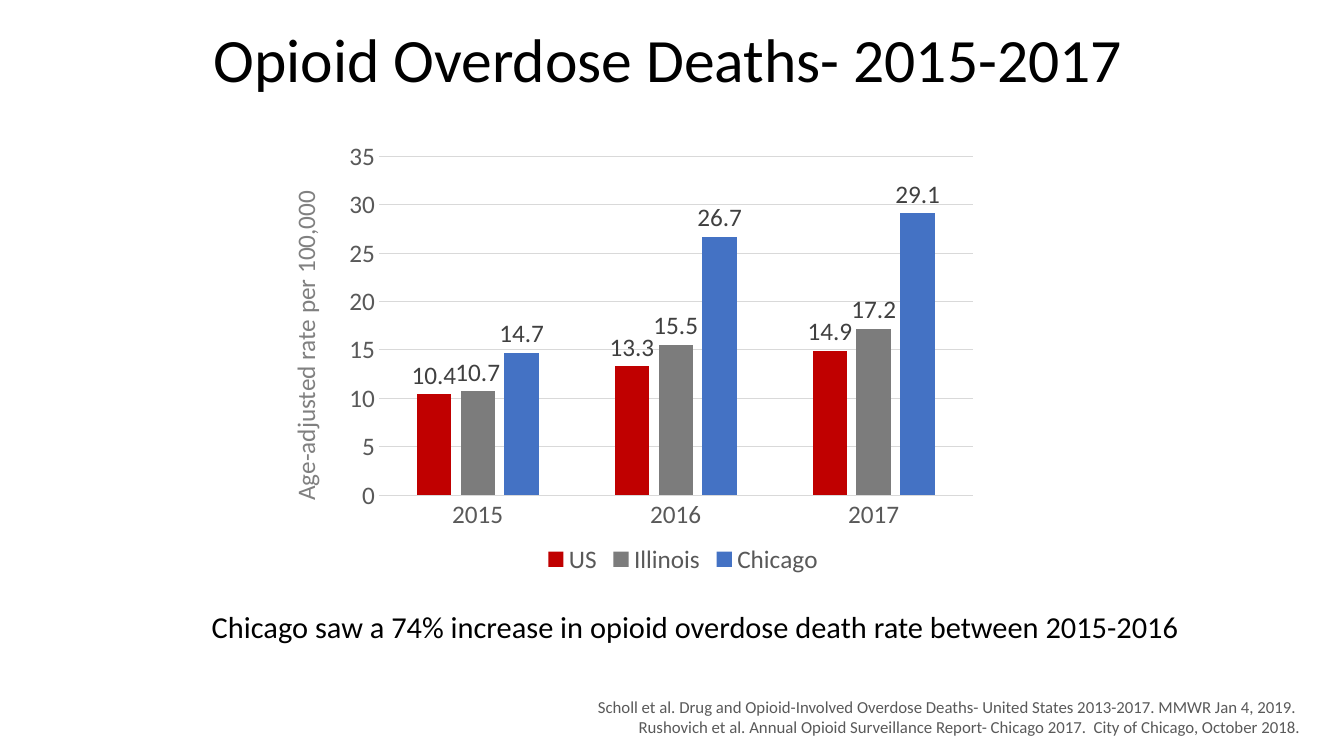
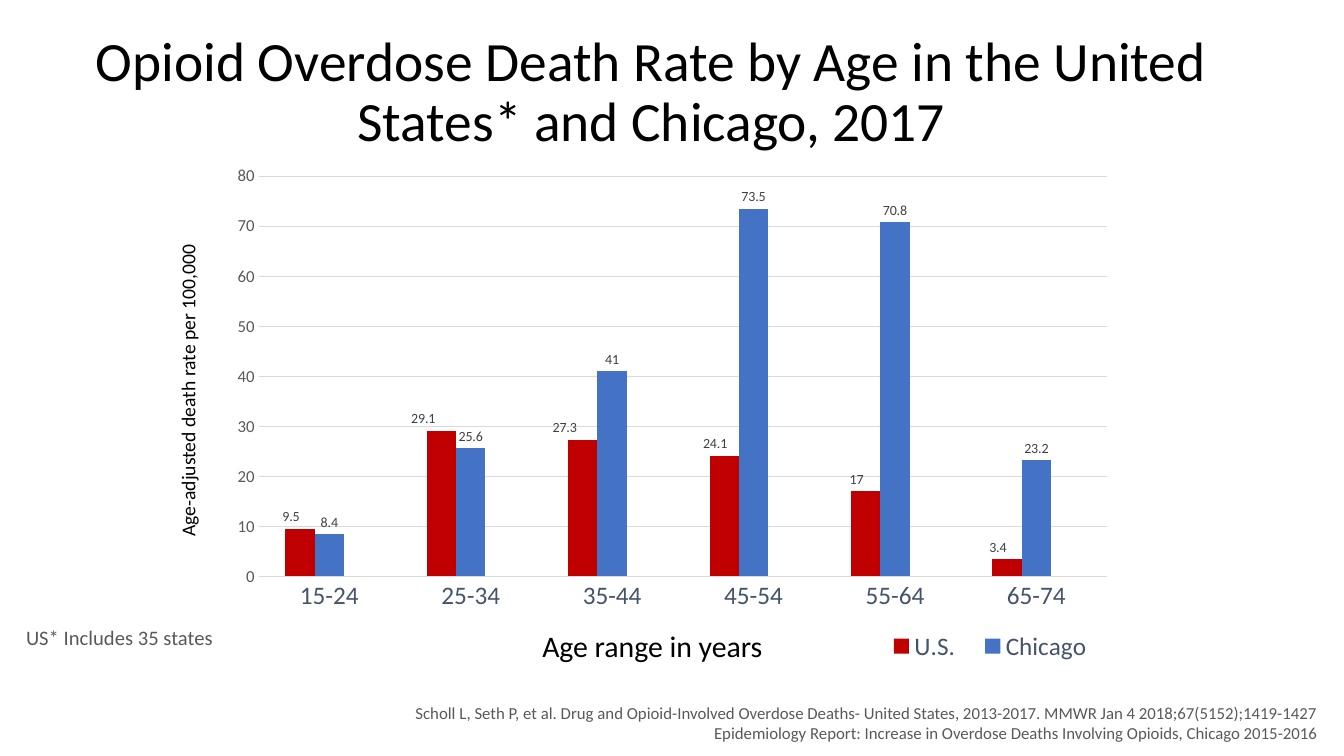
from lxml import etree
from pptx import Presentation
from pptx import util as u
from pptx.chart.data import CategoryChartData
from pptx.dml.color import RGBColor
from pptx.enum import chart as charts, text
from pptx.oxml import ns

Inches, Pt = u.Inches, u.Pt

# Shared look
FONT = "Calibri"
BLACK = RGBColor(0x00, 0x00, 0x00)
DARK = RGBColor(0x40, 0x40, 0x40)
GREY = RGBColor(0x59, 0x59, 0x59)
MID_GREY = RGBColor(0x80, 0x80, 0x80)
SLATE = RGBColor(0x44, 0x54, 0x6A)
RULE = RGBColor(0xD9, 0xD9, 0xD9)
RED = RGBColor(0xC0, 0x00, 0x00)
BAR_GREY = RGBColor(0x7C, 0x7C, 0x7C)
BLUE = RGBColor(0x44, 0x72, 0xC4)

LEFT, CENTER, RIGHT = (text.PP_ALIGN.LEFT, text.PP_ALIGN.CENTER, text.PP_ALIGN.RIGHT)
MIDDLE = text.MSO_ANCHOR.MIDDLE
TITLE = {"align": CENTER, "anchor": MIDDLE, "line_spacing": 0.9}
CAPTION = {"align": CENTER, "line_spacing": 0.7, "space_before": Pt(10)}
FOOTER = {"size": 12, "color": GREY, "align": RIGHT}
LABEL = {"wrap": False}
SIDE_LABEL = {"wrap": False, "rotation": 270}


def add_words(page, place, lines, size, color=BLACK, align=LEFT, wrap=True,
              rotation=0, anchor=text.MSO_ANCHOR.TOP, **spacing):
    box = page.shapes.add_textbox(*map(Inches, place))
    box.rotation = rotation
    frame = box.text_frame
    frame.word_wrap = wrap
    frame.vertical_anchor = anchor
    frame.text = "\n".join(lines)
    for para in frame.paragraphs:
        for name, value in {"alignment": align, **spacing}.items():
            setattr(para, name, value)
        for name, value in {"name": FONT, "size": Pt(size)}.items():
            setattr(para.font, name, value)
        para.font.color.rgb = color


def set_layout(parent, index, **values):
    """Give a chart part a manual position, in fractions of the chart."""
    for old in parent.findall(ns.qn("c:layout")):
        parent.remove(old)
    layout = etree.Element(ns.qn("c:layout"))
    manual = etree.SubElement(layout, ns.qn("c:manualLayout"))
    for name, value in values.items():
        etree.SubElement(manual, ns.qn("c:" + name)).set("val", str(value))
    parent.insert(index, layout)


SLIDES = [
    {
        "chart": (3.33, 0.88, 6.89, 4.87),
        "categories": ["2015", "2016", "2017"],
        "series": [
            ("US", RED, [10.4, 13.3, 14.9]),
            ("Illinois", BAR_GREY, [10.7, 15.5, 17.2]),
            ("Chicago", BLUE, [14.7, 26.7, 29.1]),
        ],
        "gap": 219, "overlap": -27, "top": 35, "step": 5,
        "plot": {"x": 0.062, "y": 0.138, "w": 0.855, "h": 0.69},
        "sizes": {"category": 18, "value": 18, "label": 18},
        "accent": GREY,
        "words": [
            ((1.45, 0.2, 10.36, 0.84), ["Opioid Overdose Deaths- 2015-2017"],
             {"size": 44, **TITLE}),
            ((1.79, 6.08, 10.21, 0.67),
             ["Chicago saw a 74% increase in opioid overdose death rate between 2015-2016"],
             {"size": 21.7, **CAPTION}),
            ((1.37, 3.21, 3.31, 0.4), ["Age-adjusted rate per 100,000"],
             {"size": 18, "color": MID_GREY, **SIDE_LABEL}),
            ((0.14, 6.86, 12.86, 0.5),
             ["Scholl et al. Drug and Opioid-Involved Overdose Deaths- United States "
              "2013-2017. MMWR Jan 4, 2019. ",
              "Rushovich et al. Annual Opioid Surveillance Report- Chicago 2017.  "
              "City of Chicago, October 2018."], FOOTER),
        ],
    },
    {
        "chart": (2.17, 1.55, 9, 5.09),
        "categories": ["15-24", "25-34", "35-44", "45-54", "55-64", "65-74"],
        "series": [
            ("U.S.", RED, [9.5, 29.1, 27.3, 24.1, 17, 3.4]),
            ("Chicago", BLUE, [8.4, 25.6, 41, 73.5, 70.8, 23.2]),
            ("Series 3", BAR_GREY, [None] * 6),  # empty slot beside each pair
        ],
        "gap": 182, "overlap": 0, "top": 80, "step": 10,
        "plot": {"x": 0.044, "y": 0.039, "w": 0.935, "h": 0.78},
        "legend": {"x": 0.72, "y": 0.91, "w": 0.26, "h": 0.09},
        "hidden_entry": 2,
        "label_shifts": [-0.01, -0.02, -0.02, -0.01, -0.01, -0.01],
        "sizes": {"category": 18, "value": 12, "label": 10},
        "accent": SLATE,
        "words": [
            ((0.52, 0.3, 11.88, 1.25),
             ["Opioid Overdose Death Rate by Age in the United States* and Chicago, 2017"],
             {"size": 39.6, **TITLE}),
            ((0.3, 3.69, 3.13, 0.34), ["Age-adjusted death rate per 100,000"],
             {"size": 14, **SIDE_LABEL}),
            ((5.28, 6.18, 2.42, 0.46), ["Age range in years"], {"size": 21.3, **LABEL}),
            ((0.16, 6.15, 2.06, 0.35), ["US* Includes 35 states"],
             {"size": 14.7, "color": GREY, **LABEL}),
            ((1.29, 6.92, 11.88, 0.5),
             ["Scholl L, Seth P, et al. Drug and Opioid-Involved Overdose Deaths- "
              "United States, 2013-2017. MMWR Jan 4 2018;67(5152);1419-1427",
              "Epidemiology Report: Increase in Overdose Deaths Involving Opioids, "
              "Chicago 2015-2016"], FOOTER),
        ],
    },
]

deck = Presentation()
deck.slide_width, deck.slide_height = Inches(13.33), Inches(7.5)

for content in SLIDES:
    page = deck.slides.add_slide(deck.slide_layouts[6])
    sizes, accent = content["sizes"], content["accent"]

    # Chart and its bars
    data = CategoryChartData()
    data.categories = content["categories"]
    for name, color, values in content["series"]:
        data.add_series(name, values)
    chart = page.shapes.add_chart(charts.XL_CHART_TYPE.COLUMN_CLUSTERED,
                                  *map(Inches, content["chart"]), data).chart
    chart.has_title = False
    chart.has_legend = True
    chart.font.name = FONT
    plot = chart.plots[0]
    for name, value in {"gap_width": content["gap"], "overlap": content["overlap"],
                        "vary_by_categories": False}.items():
        setattr(plot, name, value)
    set_layout(chart.element.xpath(".//c:plotArea")[0], 0, layoutTarget="inner",
               xMode="edge", yMode="edge", **content["plot"])

    # Axes
    category_axis, value_axis = chart.category_axis, chart.value_axis
    for name, value in {"minimum_scale": 0, "maximum_scale": content["top"],
                        "major_unit": content["step"],
                        "has_major_gridlines": True}.items():
        setattr(value_axis, name, value)
    for axis, size, color in ((category_axis, sizes["category"], accent),
                              (value_axis, sizes["value"], GREY)):
        axis.major_tick_mark = axis.minor_tick_mark = charts.XL_TICK_MARK.NONE
    value_axis.format.line.fill.background()
    for line in (category_axis.format.line, value_axis.major_gridlines.format.line):
        line.color.rgb = RULE
        line.width = Pt(0.75)

    # Bar colours and value labels
    fonts = [(category_axis.tick_labels.font, sizes["category"], accent),
             (value_axis.tick_labels.font, sizes["value"], GREY),
             (chart.legend.font, 18, accent)]
    for series, (name, color, values) in zip(plot.series, content["series"]):
        series.format.fill.solid()
        series.format.fill.fore_color.rgb = color
        if values[0] is None:
            continue
        labels = series.data_labels
        labels.show_value = True
        labels.position = charts.XL_LABEL_POSITION.OUTSIDE_END
        fonts.append((labels.font, sizes["label"], DARK))
    first = plot.series[0]
    for index, shift in enumerate(content.get("label_shifts", [])):
        label = first.points[index].data_label
        label.position = charts.XL_LABEL_POSITION.OUTSIDE_END
        fonts.append((label.font, sizes["label"], DARK))
        mark = chart.element.xpath(".//c:ser[1]/c:dLbls/c:dLbl")[index]
        set_layout(mark, 1, x=shift, y=0)
    for font, size, color in fonts:
        font.name, font.size = FONT, Pt(size)
        font.color.rgb = color

    # Legend
    chart.legend.position = charts.XL_LEGEND_POSITION.BOTTOM
    chart.legend.include_in_layout = False
    legend = chart.element.xpath(".//c:legend")[0]
    if "legend" in content:
        set_layout(legend, 1, xMode="edge", yMode="edge", **content["legend"])
        entry = etree.Element(ns.qn("c:legendEntry"))
        for name, value in (("idx", content["hidden_entry"]), ("delete", 1)):
            etree.SubElement(entry, ns.qn("c:" + name)).set("val", str(value))
        legend.insert(1, entry)

    # Title, captions and sources
    for place, lines, style in content["words"]:
        add_words(page, place, lines, **style)

deck.save("out.pptx")
